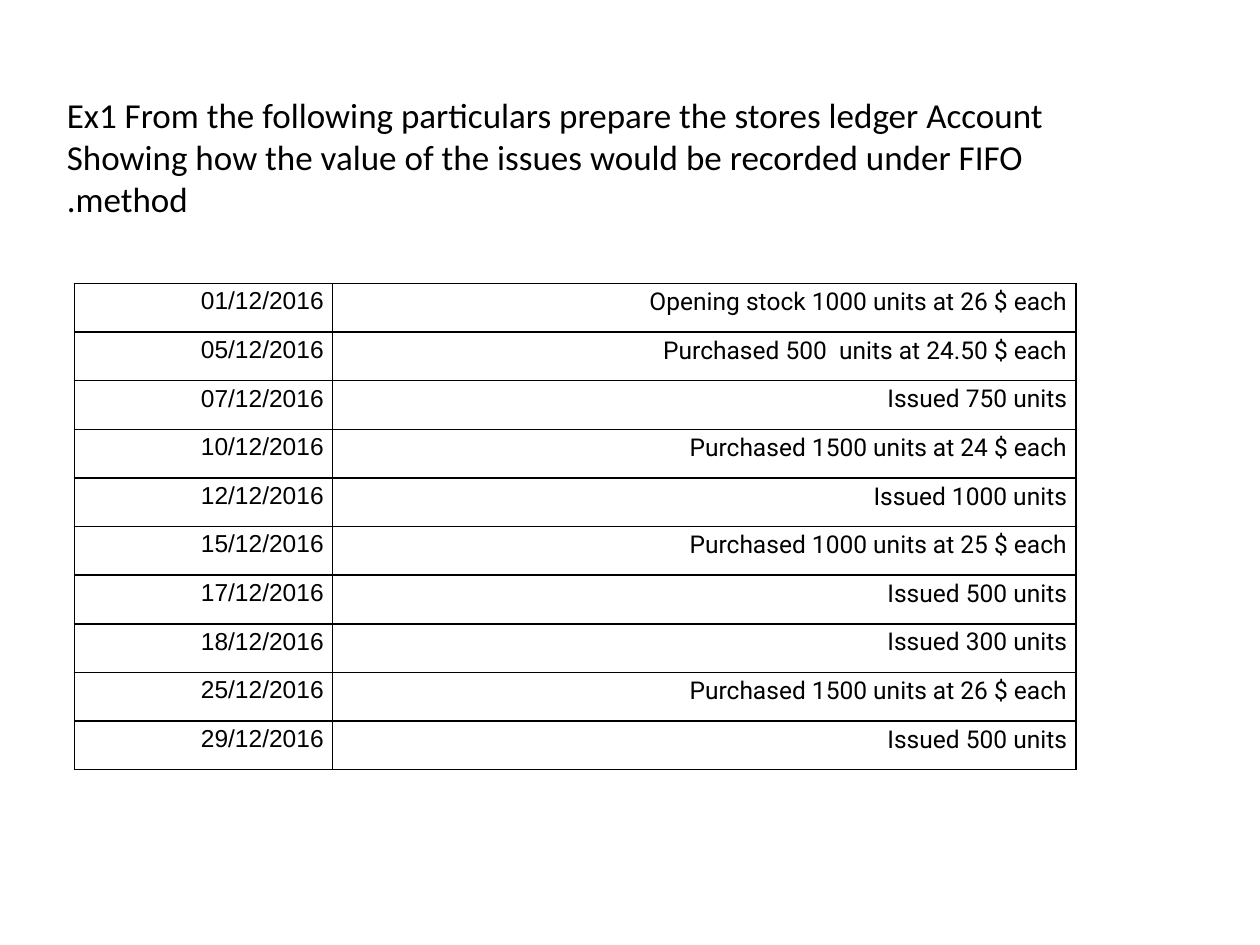
from lxml import etree
from pptx import Presentation
from pptx.dml.color import RGBColor
from pptx.enum.text import MSO_ANCHOR, PP_ALIGN
from pptx.oxml.ns import qn
from pptx.util import Inches, Pt

LEFT, RIGHT = PP_ALIGN.LEFT, PP_ALIGN.RIGHT
TOP, MIDDLE = MSO_ANCHOR.TOP, MSO_ANCHOR.MIDDLE
TITLE_ONLY = 5
BLACK, WHITE = "000000", "FFFFFF"

TITLE = ("Ex1 From the following particulars prepare the stores ledger Account "
         "Showing how the value of the issues would be recorded under FIFO method.")
ENTRIES = [
    ("01/12/2016", "Opening stock 1000 units at 26 $ each"),
    ("05/12/2016", "Purchased 500  units at 24.50 $ each"),
    ("07/12/2016", "Issued 750 units"),
    ("10/12/2016", "Purchased 1500 units at 24 $ each"),
    ("12/12/2016", "Issued 1000 units"),
    ("15/12/2016", "Purchased 1000 units at 25 $ each"),
    ("17/12/2016", "Issued 500 units"),
    ("18/12/2016", "Issued 300 units"),
    ("25/12/2016", "Purchased 1500 units at 26 $ each"),
    ("29/12/2016", "Issued 500 units"),
]


def color(code):
    return RGBColor.from_string(code)


def write(para, text, font, size, align, script_font):
    """Add one run to a right-to-left paragraph."""
    para.alignment = align
    para._p.get_or_add_pPr().set("rtl", "1")
    run = para.add_run()
    run.text = text
    run.font.name = font
    run.font.size = Pt(size)
    run.font.color.rgb = color(BLACK)
    # Font for right-to-left script, which also governs the dates
    etree.SubElement(run._r.get_or_add_rPr(), qn("a:cs"), typeface=script_font)


def add_border(cell, code, width):
    props = cell._tc.get_or_add_tcPr()
    for i, side in enumerate(("lnL", "lnR", "lnT", "lnB")):
        line = etree.Element(qn("a:" + side), w=str(Pt(width)))
        fill = etree.SubElement(line, qn("a:solidFill"))
        etree.SubElement(fill, qn("a:srgbClr"), val=code)
        props.insert(i, line)


def add_title(slide, left, top, width, height):
    title = slide.shapes.title
    title.left, title.top = Inches(left), Inches(top)
    title.width, title.height = Inches(width), Inches(height)
    frame = title.text_frame
    frame.word_wrap = True
    frame.vertical_anchor = MIDDLE
    write(frame.paragraphs[0], TITLE, "Calibri", 20, LEFT, "Calibri")


def add_ledger(slide, left, top, width, height, date_width):
    frame = slide.shapes.add_table(len(ENTRIES), 2, Inches(left), Inches(top),
                                   Inches(width), Inches(height))
    table = frame.table
    table.first_row = table.horz_banding = False
    table.columns[0].width = Inches(date_width)
    table.columns[1].width = Inches(width - date_width)
    for row, entry in zip(table.rows, ENTRIES):
        for cell, text in zip(row.cells, entry):
            cell.fill.solid()
            cell.fill.fore_color.rgb = color(WHITE)
            cell.margin_left = cell.margin_right = Inches(0.07)
            cell.margin_top = cell.margin_bottom = 0
            cell.vertical_anchor = TOP
            para = cell.text_frame.paragraphs[0]
            para.line_spacing = 1.15
            para.space_after = Pt(10)
            write(para, text, "Roboto", 14, RIGHT, "Arial")
            add_border(cell, BLACK, 1)


def main():
    deck = Presentation()
    deck.slide_width, deck.slide_height = Inches(10), Inches(7.5)
    slide = deck.slides.add_slide(deck.slide_layouts[TITLE_ONLY])
    add_title(slide, 0.43, 0.44, 8.5, 1.61)
    add_ledger(slide, 0.59, 2.25, 7.95, 3.86, 2.05)
    deck.save("out.pptx")


if __name__ == "__main__":
    main()
